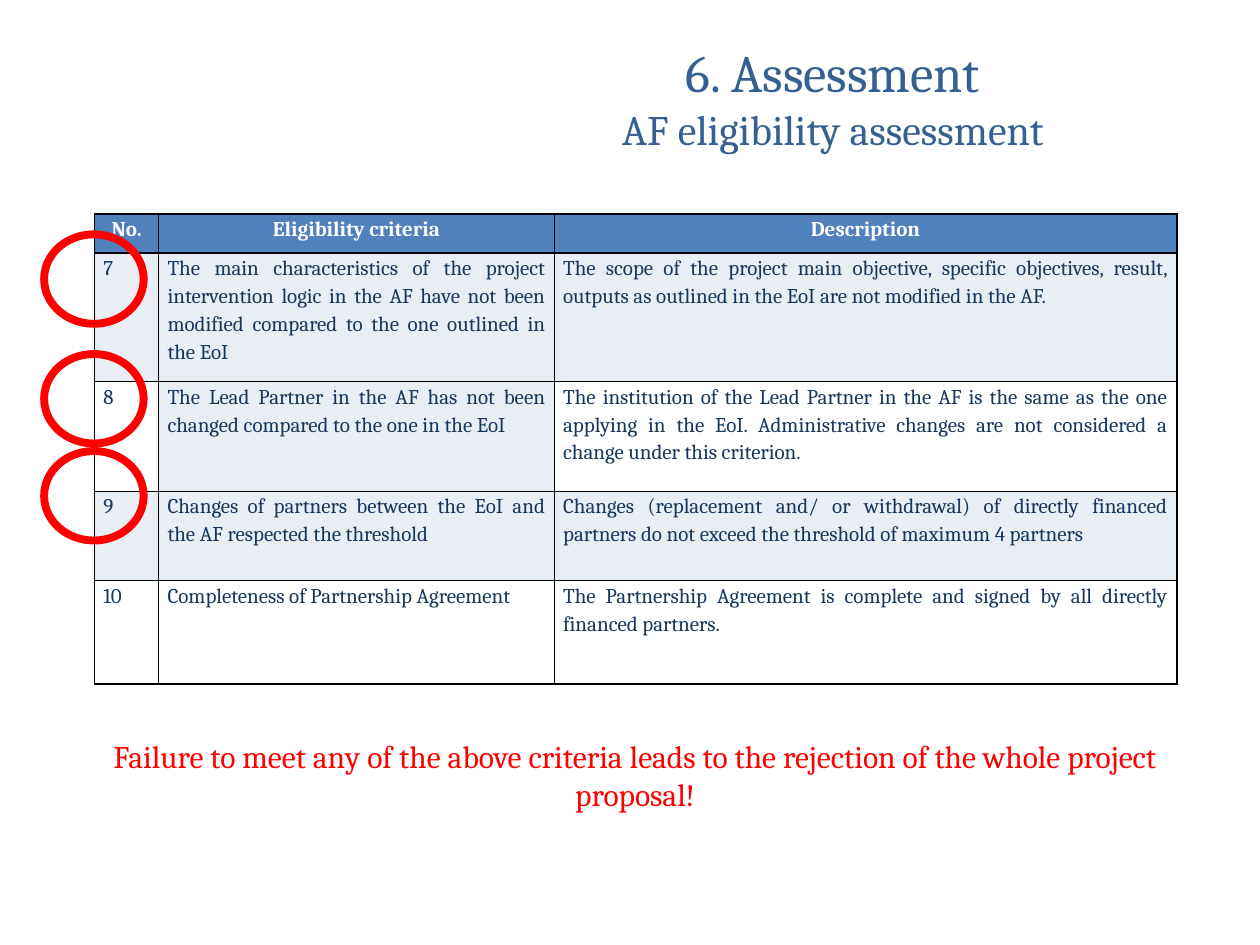
import pptx
import pptx.util
import pptx.dml.color
import pptx.enum.shapes
import pptx.enum.text
import pptx.oxml
import pptx.oxml.ns

Inches = pptx.util.Inches
Pt = pptx.util.Pt
RGBColor = pptx.dml.color.RGBColor
PP_ALIGN = pptx.enum.text.PP_ALIGN
MSO_ANCHOR = pptx.enum.text.MSO_ANCHOR

FONT = "Cambria"
TITLE_BLUE = RGBColor(0x37, 0x60, 0x92)
HEADER_BLUE = RGBColor(0x4F, 0x81, 0xBD)
BAND = RGBColor(0xE9, 0xED, 0xF4)
NAVY = RGBColor(0x17, 0x37, 0x5E)
WHITE = RGBColor(0xFF, 0xFF, 0xFF)
RED = RGBColor(0xFF, 0x00, 0x00)

CRITERIA = [
    ("No.", "Eligibility criteria", "Description"),
    ("7",
     "The main characteristics of the project intervention logic in the AF have not "
     "been modified compared to the one outlined in the EoI",
     "The scope of the project main objective, specific objectives, result, outputs "
     "as outlined in the EoI are not modified in the AF."),
    ("8",
     "The Lead Partner in the AF has not been changed compared to the one in the EoI",
     "The institution of the Lead Partner in the AF is the same as the one applying "
     "in the EoI. Administrative changes are not considered a change under this criterion."),
    ("9",
     "Changes of partners between the EoI and the AF respected the threshold",
     "Changes (replacement and/ or withdrawal) of directly financed partners do not "
     "exceed the threshold of maximum 4 partners"),
    ("10",
     "Completeness of Partnership Agreement",
     "The Partnership Agreement is complete and signed by all directly financed partners."),
]
COLUMN_WIDTHS = [0.51, 3.14, 4.94]
ROW_HEIGHTS = [0.31, 1.02, 0.87, 0.71, 0.82]
ROW_FILLS = [HEADER_BLUE, BAND, WHITE, BAND, WHITE]


def style(paragraph, size, color, align, bold=False):
    paragraph.alignment = align
    paragraph.font.name = FONT
    paragraph.font.size = Pt(size)
    paragraph.font.bold = bold
    paragraph.font.color.rgb = color


def add_borders(cell):
    properties = cell._tc.get_or_add_tcPr()
    for position, side in enumerate(("lnL", "lnR", "lnT", "lnB")):
        border = pptx.oxml.parse_xml(
            f'<a:{side} {pptx.oxml.ns.nsdecls("a")} w="{Pt(1)}"><a:solidFill>'
            f'<a:srgbClr val="000000"/></a:solidFill></a:{side}>')
        properties.insert(position, border)


presentation = pptx.Presentation()
presentation.slide_width = Inches(10)
presentation.slide_height = Inches(7.5)
slide = presentation.slides.add_slide(presentation.slide_layouts[5])

# Title and subtitle
title = slide.shapes.title
title.left, title.top = Inches(3.58), Inches(0.3)
title.width, title.height = Inches(6.06), Inches(0.94)
title.text_frame.text = "6. Assessment\nAF eligibility assessment"
title.text_frame.auto_size = pptx.enum.text.MSO_AUTO_SIZE.NONE
title.text_frame.vertical_anchor = MSO_ANCHOR.MIDDLE
for paragraph, size in zip(title.text_frame.paragraphs, (30, 24)):
    style(paragraph, size, TITLE_BLUE, PP_ALIGN.CENTER)

# Criteria table
criteria_table = slide.shapes.add_table(
    len(CRITERIA), len(COLUMN_WIDTHS),
    Inches(0.75), Inches(1.7), Inches(8.58), Inches(3.73)).table
for column, width in zip(criteria_table.columns, COLUMN_WIDTHS):
    column.width = Inches(width)
for row_index, texts in enumerate(CRITERIA):
    criteria_table.rows[row_index].height = Inches(ROW_HEIGHTS[row_index])
    is_header = row_index == 0
    for column_index, text in enumerate(texts):
        cell = criteria_table.cell(row_index, column_index)
        cell.text = text
        cell.margin_left = cell.margin_right = Inches(0.07)
        cell.margin_top = cell.margin_bottom = 0
        cell.fill.solid()
        cell.fill.fore_color.rgb = ROW_FILLS[row_index]
        add_borders(cell)
        paragraph = cell.text_frame.paragraphs[0]
        paragraph.line_spacing = 1.15
        if is_header:
            paragraph.space_after = Pt(3)
            style(paragraph, 12, WHITE, PP_ALIGN.CENTER, bold=True)
        else:
            style(paragraph, 12, NAVY, PP_ALIGN.JUSTIFY)
# The criterion of row 8 keeps the band colour
criteria_table.cell(2, 1).fill.fore_color.rgb = BAND

# Warning below the table
warning = slide.shapes.add_textbox(Inches(0.75), Inches(5.8), Inches(8.58), Inches(0.71))
warning.text_frame.word_wrap = True
warning.text_frame.text = ("Failure to meet any of the above criteria leads to the "
                           "rejection of the whole project proposal!")
style(warning.text_frame.paragraphs[0], 18, RED, PP_ALIGN.CENTER)

# Red rings around numbers 7 to 9
for top in (1.86, 2.81, 3.58):
    ring = slide.shapes.add_shape(
        pptx.enum.shapes.MSO_SHAPE.OVAL, Inches(0.35), Inches(top), Inches(0.79), Inches(0.71))
    ring.shadow.inherit = False
    ring.fill.background()
    ring.line.color.rgb = RED
    ring.line.width = Pt(4.5)

presentation.save("out.pptx")
